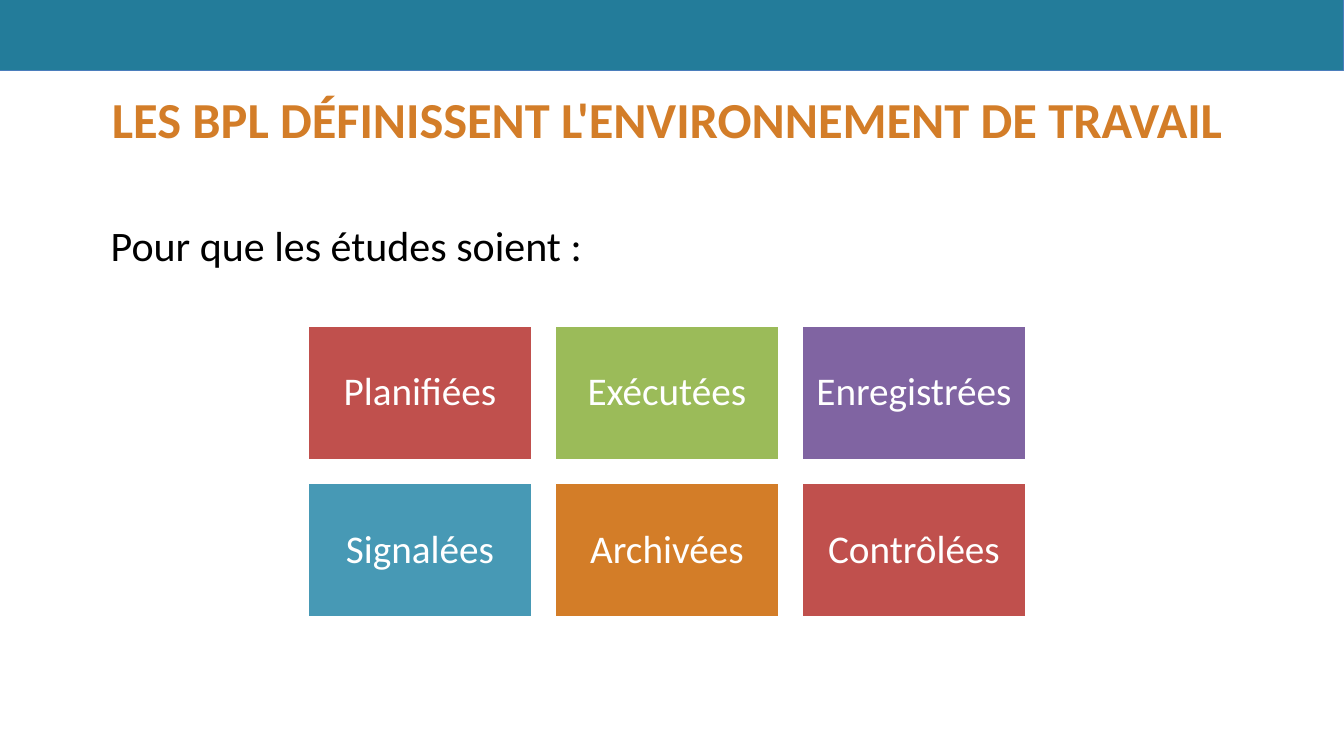
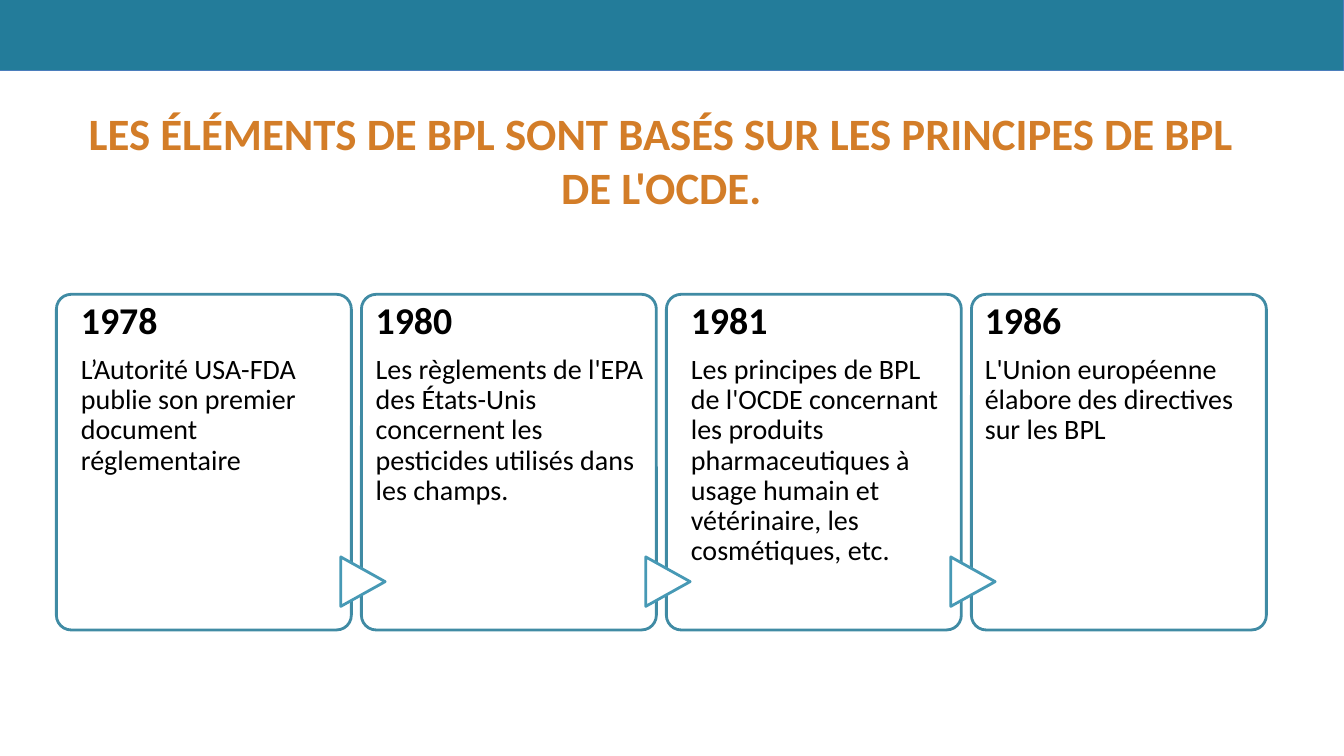
from pptx import Presentation
from pptx import util as u
from pptx.dml.color import RGBColor
from pptx.enum import shapes, text

FONT = "Calibri"
WHITE, BLACK, ORANGE = "FFFFFF", "000000", "D37D28"
RED, GREEN, PURPLE, BLUE = "C0504D", "9BBB59", "8064A2", "4799B5"
BAND, BAND_LINE, CARD_LINE = "237C9A", "4B7EBC", "408BA4"
SLIDE_W, SLIDE_H, CONTENT_W = 13.33, 7.5, 12

TILES = [
    [("Planifiées", RED), ("Exécutées", GREEN), ("Enregistrées", PURPLE)],
    [("Signalées", BLUE), ("Archivées", ORANGE), ("Contrôlées", RED)],
]
MILESTONES = [
    ("1978", "L’Autorité USA-FDA publie son premier document réglementaire", 0.24),
    ("1980", "Les règlements de l'EPA des États-Unis concernent les pesticides "
             "utilisés dans les champs.", 0.14),
    ("1981", "Les principes de BPL de l'OCDE concernant les produits pharmaceutiques "
             "à usage humain et vétérinaire, les cosmétiques, etc.", 0.24),
    ("1986", "L'Union européenne élabore des directives sur les BPL", 0.13),
]


def rgb(value):
    """Turn a hex string into a colour."""
    return RGBColor.from_string(value)


def set_frame(tf, anchor, *insets):
    """Set wrapping, anchor and the left, top, right and bottom insets."""
    tf.word_wrap = True
    tf.auto_size = text.MSO_AUTO_SIZE.NONE
    tf.vertical_anchor = anchor
    for side, inset in zip(("left", "top", "right", "bottom"), insets):
        setattr(tf, f"margin_{side}", u.Inches(inset))


def write(p, content, size, color, bold=False, **layout):
    """Write one formatted run into a paragraph."""
    r = p.add_run()
    r.text = content
    font = {"name": FONT, "size": u.Pt(size), "bold": bold}
    for target, values in ((r.font, font), (p, layout)):
        for name, value in values.items():
            setattr(target, name, value)
    r.font.color.rgb = rgb(color)


def add_box(s, kind, left, top, width, height, fill, line, weight):
    """Add a filled and outlined preset shape."""
    sp = s.shapes.add_shape(kind, *map(u.Inches, (left, top, width, height)))
    sp.shadow.inherit = False
    sp.fill.solid()
    sp.fill.fore_color.rgb = rgb(fill)
    sp.line.color.rgb = rgb(line)
    sp.line.width = u.Pt(weight)
    return sp


def add_slide(prs, title, left, top, height, size):
    """Add a slide with the shared band and title style."""
    s = prs.slides.add_slide(prs.slide_layouts[5])
    add_box(s, shapes.MSO_SHAPE.RECTANGLE, 0, 0, SLIDE_W, 0.7, BAND, BAND_LINE, 0.75)
    sp = s.shapes.title
    sp.left, sp.top, sp.width, sp.height = map(u.Inches, (left, top, CONTENT_W, height))
    set_frame(sp.text_frame, text.MSO_ANCHOR.TOP, 0.1, 0.05, 0.1, 0)
    write(sp.text_frame.paragraphs[0], title, size, ORANGE, True,
          alignment=text.PP_ALIGN.CENTER)
    return s


def add_intro(s, content):
    """Add the sentence that introduces the tiles."""
    sp = s.shapes.add_textbox(*map(u.Inches, (1, 1.88, 5.56, 0.99)))
    set_frame(sp.text_frame, text.MSO_ANCHOR.TOP, 0.1, 0.05, 0.1, 0.05)
    write(sp.text_frame.paragraphs[0], content, 30, BLACK, line_spacing=1.5)


def add_tiles(s, rows):
    """Lay out coloured tiles on an evenly spaced grid."""
    left, top, width, height, gap = 3.05, 3.23, 2.23, 1.34, 0.22
    for i, row in enumerate(rows):
        for j, (label, color) in enumerate(row):
            sp = add_box(s, shapes.MSO_SHAPE.RECTANGLE, left + j * (width + gap),
                         top + i * (height + gap), width, height, color, WHITE, 2)
            set_frame(sp.text_frame, text.MSO_ANCHOR.MIDDLE, 0.12, 0.12, 0.12, 0.12)
            write(sp.text_frame.paragraphs[0], label, 28, WHITE,
                  alignment=text.PP_ALIGN.CENTER, line_spacing=0.9)


def add_card(s, left, top, width, height, year, event, indent):
    """Add a rounded card with a year and its event."""
    sp = add_box(s, shapes.MSO_SHAPE.ROUNDED_RECTANGLE, left, top, width, height,
                 WHITE, CARD_LINE, 2)
    sp.adjustments[0] = 0.05
    tf = sp.text_frame
    set_frame(tf, text.MSO_ANCHOR.TOP, indent - 0.04, 0.03, 0.03, 0)
    layout = {"alignment": text.PP_ALIGN.LEFT, "line_spacing": 0.9}
    write(tf.paragraphs[0], year, 27, BLACK, True, space_after=u.Pt(9), **layout)
    write(tf.add_paragraph(), event, 20, BLACK, **layout)


def add_timeline(s, milestones):
    """Lay out equal cards with a triangle over each gap."""
    left, top, height, gap = 0.56, 2.92, 3.33, 0.1
    count = len(milestones)
    width = (CONTENT_W - gap * (count - 1)) / count
    lefts = [left + i * (width + gap) for i in range(count)]
    for x, milestone in zip(lefts, milestones):
        add_card(s, x, top, width, height, *milestone)
    for x in lefts[1:]:
        sp = add_box(s, shapes.MSO_SHAPE.FLOWCHART_EXTRACT, x - 0.23, 5.55, 0.49, 0.44,
                     WHITE, BLUE, 2)
        sp.rotation = 90


def main():
    """Build and save the presentation."""
    prs = Presentation()
    prs.slide_width, prs.slide_height = u.Inches(SLIDE_W), u.Inches(SLIDE_H)
    s = add_slide(prs, "LES BPL DÉFINISSENT L'ENVIRONNEMENT DE TRAVAIL",
                  0.62, 0.82, 0.65, 36)
    add_intro(s, "Pour que les études soient :")
    add_tiles(s, TILES)
    s = add_slide(prs, "LES ÉLÉMENTS DE BPL SONT BASÉS SUR LES PRINCIPES DE BPL DE L'OCDE.",
                  0.56, 1, 1.14, 32)
    add_timeline(s, MILESTONES)
    prs.save("out.pptx")


if __name__ == "__main__":
    main()
